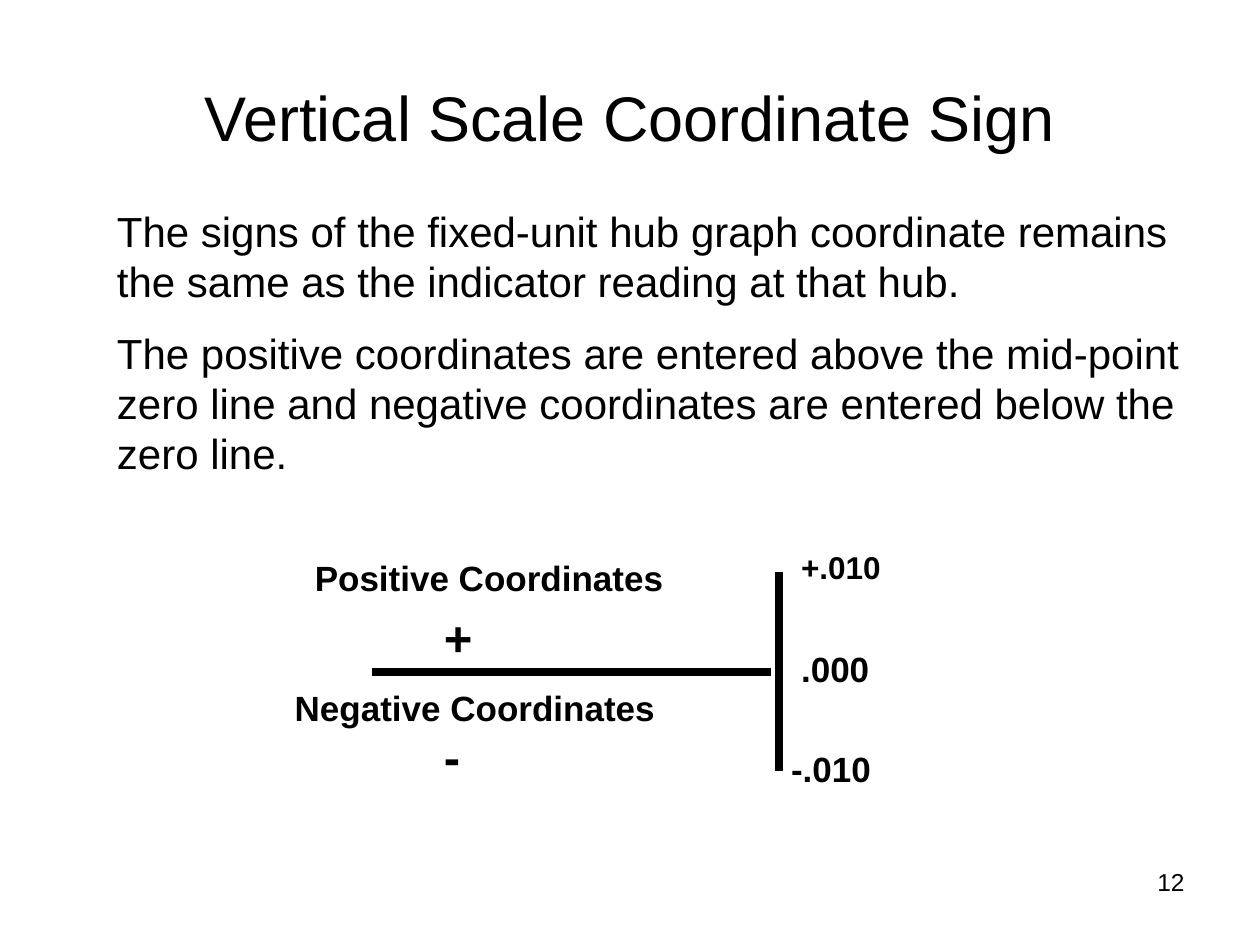
from lxml.etree import SubElement
from pptx import Presentation
from pptx.dml.color import RGBColor as RGB
from pptx.enum.shapes import MSO_CONNECTOR as Link
from pptx.enum.text import MSO_ANCHOR as Anchor, PP_ALIGN as Align
from pptx.oxml.ns import qn
from pptx.util import Inches, Pt

COLORS = {"ink": "000000", "paper": "FFFFFF"}
FONT = "Arial"
COLS, ROWS = 100, 75


class Sheet:
    """Places elements on one slide, in columns and rows of an even grid."""

    def __init__(self, deck):
        self.slide = deck.slides.add_slide(deck.slide_layouts[6])
        self.col = deck.slide_width / COLS
        self.row = deck.slide_height / ROWS
        fill = self.slide.background.fill
        fill.solid()
        fill.fore_color.rgb = RGB.from_string(COLORS["paper"])

    def spot(self, x, y):
        return round(x * self.col), round(y * self.row)

    def text(self, x, y, w, h, words, size, bold=False,
             align=Align.LEFT, anchor=Anchor.TOP):
        box = self.slide.shapes.add_textbox(*self.spot(x, y), *self.spot(w, h))
        frame = box.text_frame
        frame.word_wrap = True
        frame.vertical_anchor = anchor
        frame.text = words
        for i, para in enumerate(frame.paragraphs):
            para.alignment = align
            para.space_before = Pt(size / 2 if i else 0)
            for run in para.runs:
                font = run.font
                font.name, font.size, font.bold = FONT, Pt(size), bold
                font.color.rgb = RGB.from_string(COLORS["ink"])

    def rule(self, x1, y1, x2, y2, width=4.5):
        line = self.slide.shapes.add_connector(
            Link.STRAIGHT, *self.spot(x1, y1), *self.spot(x2, y2))
        line.line.color.rgb = RGB.from_string(COLORS["ink"])
        line.line.width = Pt(width)
        SubElement(line._element.spPr, qn("a:effectLst"))


def main():
    deck = Presentation()
    deck.slide_width, deck.slide_height = Inches(10), Inches(7.5)
    sheet = Sheet(deck)

    sheet.text(5, 3, 90, 12.5, "Vertical Scale Coordinate Sign", 36,
               align=Align.CENTER, anchor=Anchor.MIDDLE)
    sheet.text(71.7, 68.3, 23.3, 5.2, "12", 14, align=Align.RIGHT)
    sheet.text(8.3, 15.8, 86.7, 23.2, "\n".join([
        "The signs of the fixed-unit hub graph coordinate remains the same "
        "as the indicator reading at that hub.",
        "The positive coordinates are entered above the mid-point zero line "
        "and negative coordinates are entered below the zero line.",
    ]), 24)

    # Vertical scale with its zero line
    axis, zero, half = 61.8, 53.3, 7.9
    sheet.rule(axis, zero - half, axis, zero + half)
    sheet.rule(axis - 0.6, zero, 29.5, zero)

    # Scale values, one half-scale apart
    marks = [("+.010", 62.6, 18), (".000", 62.6, 20), ("-.010", 61.8, 20)]
    for i, (mark, x, size) in enumerate(marks):
        sheet.text(x, 43 + half * i, 10, 4.3, mark, size, bold=True)

    # Names and signs of the two sides
    sheet.text(24, 43, 31.6, 5.7, "Positive Coordinates", 20, bold=True,
               anchor=Anchor.MIDDLE)
    sheet.text(22.4, 54, 32.5, 4.4, "Negative Coordinates", 20, bold=True)
    for sign, y in (("+", 47.7), ("-", 57.2)):
        sheet.text(34.25, y, 3.9, 5.7, sign, 28, bold=True)

    deck.save("out.pptx")


if __name__ == "__main__":
    main()
